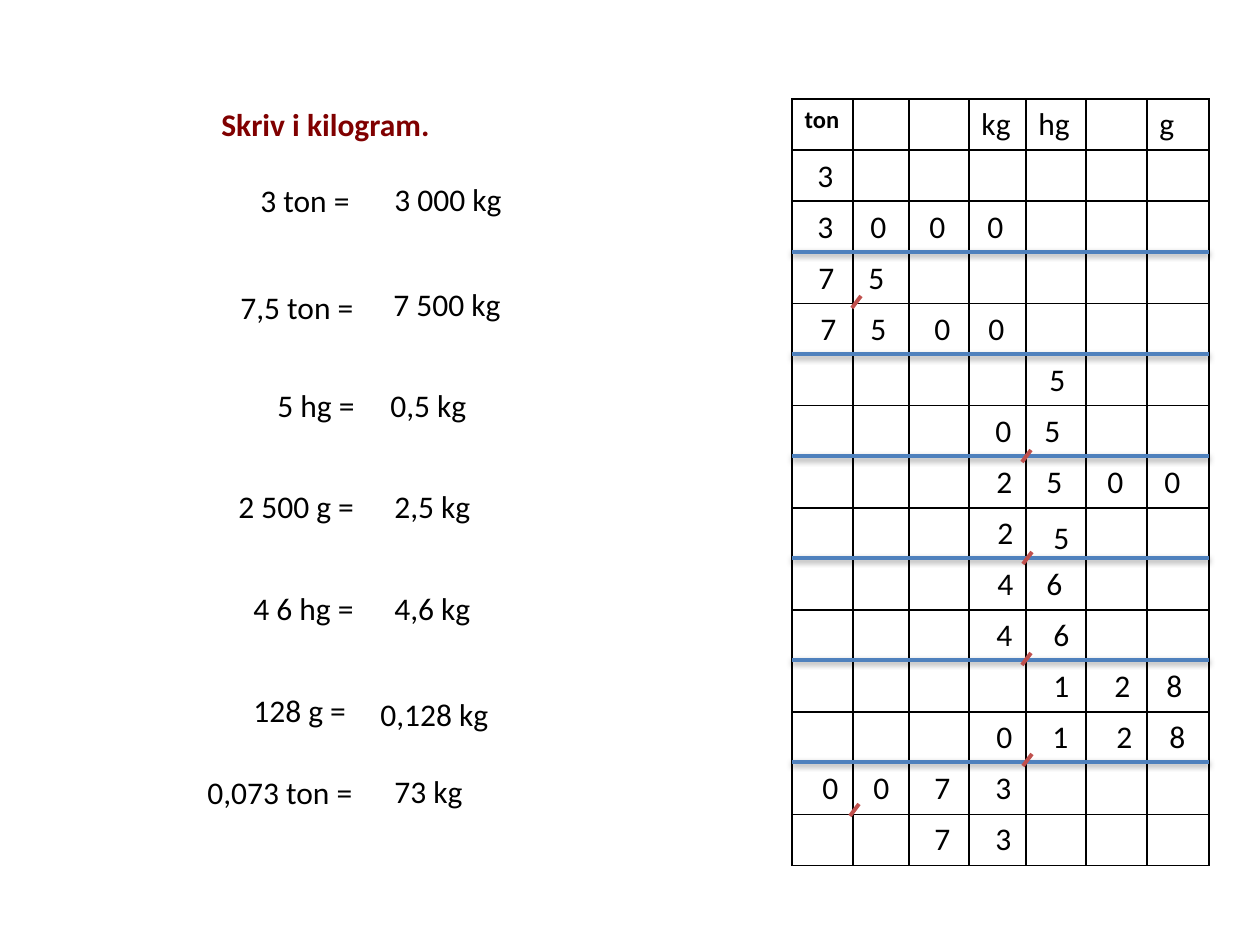
from pptx import Presentation
from pptx.dml.color import RGBColor
from pptx.enum.shapes import MSO_CONNECTOR
from pptx.enum.text import MSO_AUTO_SIZE
from pptx.oxml import parse_xml
from pptx.oxml.ns import nsdecls
from pptx.util import Emu, Pt

PX = 914400 // 126
FONT = "Calibri"
COLORS = {"text": "000000", "title": "800000", "cell": "FFFFFF",
          "separator": "4F81BD", "comma": "C0504D"}

TABLE_LEFT, TABLE_TOP, ROW_HEIGHT, ROW_COUNT = 792, 99, 51, 15
COLUMN_WIDTHS = [61, 56, 60, 57, 60, 61, 62]
UNITS = ["ton", "", "", "kg", "hg", "", "g"]

DIGITS = {
    1: [(805, "3")],
    2: [(805, "3"), (858, "0"), (917, "0"), (975, "0")],
    3: [(806, "7"), (856, "5")],
    4: [(808, "7"), (858, "5"), (922, "0"), (976, "0")],
    5: [(1037, "5")],
    6: [(983, "0"), (1032, "5")],
    7: [(984, "2"), (1034, "5"), (1095, "0"), (1152, "0")],
    8: [(985, "2"), (1041, "5", 5)],
    9: [(985, "4"), (1034, "6")],
    10: [(984, "4"), (1041, "6")],
    11: [(1041, "1"), (1102, "2"), (1154, "8")],
    12: [(984, "0"), (1040, "1"), (1104, "2"), (1157, "8")],
    13: [(810, "0"), (861, "0"), (922, "7"), (983, "3")],
    14: [(922, "7"), (983, "3")],
}
COMMAS = [(856, 302), (1026, 456), (1027, 558), (1026, 659), (1027, 760), (854, 810)]
EQUATIONS = [
    (248, 175, 116, "3 ton ="), (382, 174, 134, "3 000 kg"),
    (228, 282, 140, "7,5 ton ="), (381, 279, 134, "7 500 kg"),
    (265, 380, 103, "5 hg ="), (378, 380, 102, "0,5 kg"),
    (226, 481, 142, "2 500 g ="), (382, 481, 102, "2,5 kg"),
    (241, 583, 127, "4 6 hg ="), (382, 583, 102, "4,6 kg"),
    (241, 685, 118, "128 g ="), (368, 689, 135, "0,128 kg"),
    (195, 767, 173, "0,073 ton ="), (382, 766, 95, "73 kg"),
]


def px(n):
    return Emu(n * PX)


def rgb(name):
    return RGBColor.from_string(COLORS[name])


def format_text(tf, size=18, color="text", bold=False):
    for p in tf.paragraphs:
        for r in p.runs:
            r.font.name = FONT
            r.font.size = Pt(size)
            r.font.bold = bold
            r.font.color.rgb = rgb(color)


def add_text(s, x, y, w, text, wrap=False, color="text", bold=False):
    tf = s.shapes.add_textbox(px(x), px(y), px(w), px(51)).text_frame
    tf.word_wrap = wrap
    tf.auto_size = MSO_AUTO_SIZE.SHAPE_TO_FIT_TEXT
    tf.text = text
    format_text(tf, color=color, bold=bold)


def add_digit(s, row, x, digit, dy=0):
    add_text(s, x, TABLE_TOP + row * ROW_HEIGHT + dy, 37, digit, wrap=True)


def add_line(s, x1, y1, x2, y2, color, width, effect=""):
    line = s.shapes.add_connector(MSO_CONNECTOR.STRAIGHT, px(x1), px(y1), px(x2), px(y2))
    line.line.color.rgb = rgb(color)
    line.line.width = Pt(width)
    line._element.spPr.append(
        parse_xml(f'<a:effectLst {nsdecls("a")}>{effect}</a:effectLst>'))


def add_separator(s, row):
    y = TABLE_TOP + row * ROW_HEIGHT
    shadow = ('<a:outerShdw blurRad="40000" dist="20000" dir="5400000" rotWithShape="0">'
              '<a:srgbClr val="000000"><a:alpha val="38000"/></a:srgbClr></a:outerShdw>')
    add_line(s, TABLE_LEFT, y, TABLE_LEFT + sum(COLUMN_WIDTHS), y, "separator", 2, shadow)


def set_borders(cell):
    tcPr = cell._tc.get_or_add_tcPr()
    for i, side in enumerate(("lnL", "lnR", "lnT", "lnB")):
        tcPr.insert(i, parse_xml(
            f'<a:{side} {nsdecls("a")} w="12700"><a:solidFill>'
            f'<a:srgbClr val="{COLORS["text"]}"/></a:solidFill></a:{side}>'))


def add_unit_table(s):
    table = s.shapes.add_table(
        ROW_COUNT, len(UNITS), px(TABLE_LEFT), px(TABLE_TOP),
        px(sum(COLUMN_WIDTHS)), px(ROW_COUNT * ROW_HEIGHT)).table
    table.first_row = table.horz_banding = False
    for column, width in zip(table.columns, COLUMN_WIDTHS):
        column.width = px(width)
    for row in table.rows:
        row.height = px(ROW_HEIGHT)
    for cell in table.iter_cells():
        cell.fill.solid()
        cell.fill.fore_color.rgb = rgb("cell")
        set_borders(cell)
    for i, unit in enumerate(UNITS):
        if unit:
            tf = table.cell(0, i).text_frame
            tf.text = unit
            format_text(tf, 14 if unit == "ton" else 18, bold=unit == "ton")


def main():
    prs = Presentation()
    prs.slide_width, prs.slide_height = px(1260), px(945)
    s = prs.slides.add_slide(prs.slide_layouts[6])
    add_unit_table(s)
    for row in range(3, ROW_COUNT, 2):
        add_separator(s, row)
    for row, digits in DIGITS.items():
        for digit in digits:
            add_digit(s, row, *digit)
    for x, y in COMMAS:
        add_line(s, x + 5, y - 6, x - 4, y + 6, "comma", 2.25)
    add_text(s, 209, 99, 237, "Skriv i kilogram.", color="title", bold=True)
    for equation in EQUATIONS:
        add_text(s, *equation)
    prs.save("out.pptx")


if __name__ == "__main__":
    main()
